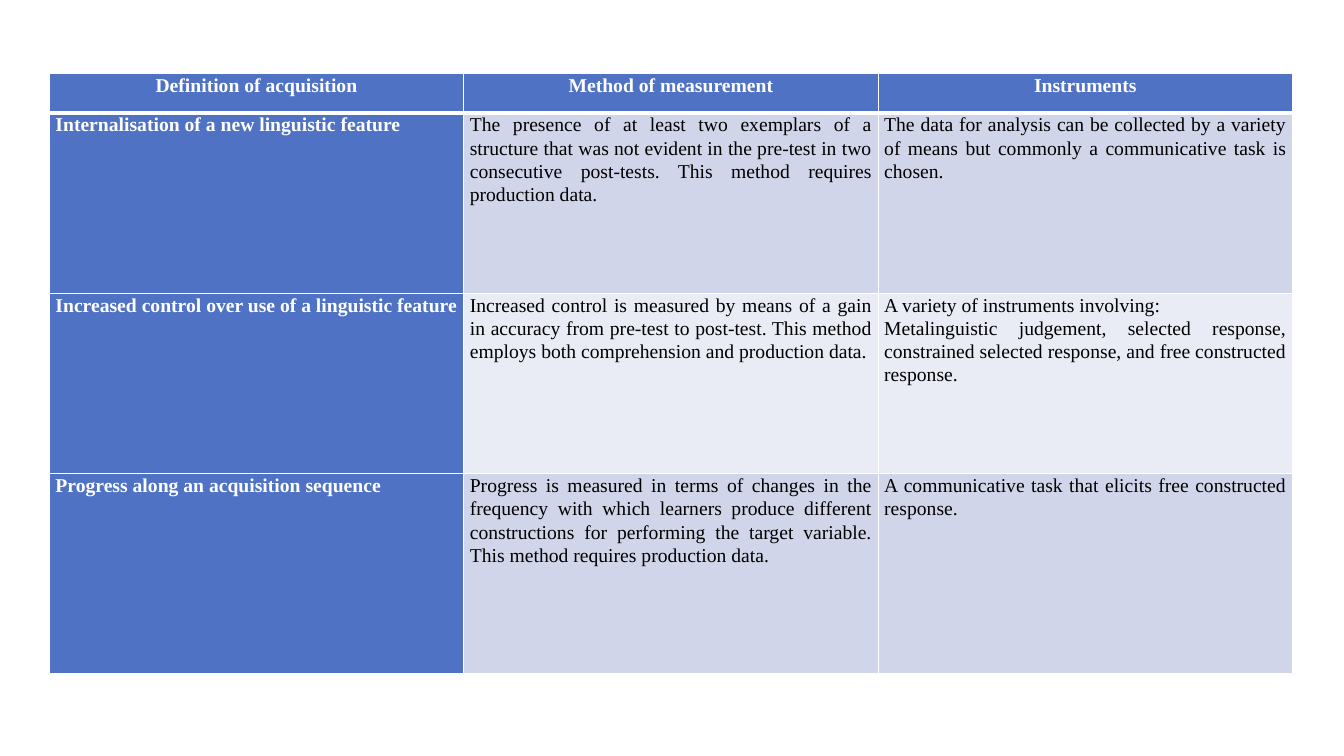
from pptx import Presentation
from pptx.dml.color import RGBColor
from pptx.enum.text import PP_ALIGN as Align
from pptx.oxml.ns import qn
from pptx.util import Inches, Pt
from lxml.etree import SubElement

BLUE = RGBColor(0x50, 0x72, 0xC4)
DARK_BAND = RGBColor(0xD0, 0xD5, 0xEA)
LIGHT_BAND = RGBColor(0xE9, 0xEB, 0xF5)
WHITE = RGBColor(0xFF, 0xFF, 0xFF)
BLACK = RGBColor(0, 0, 0)

COLUMN_WIDTH = 4.11
ROW_HEIGHTS = [0.39, 1.79, 1.79, 1.98]
ROWS = [
    ["Definition of acquisition", "Method of measurement", "Instruments"],
    ["Internalisation of a new linguistic feature",
     "The presence of at least two exemplars of a structure that was not evident in the "
     "pre-test in two consecutive post-tests. This method requires production data.",
     "The data for analysis can be collected by a variety of means but commonly a "
     "communicative task is chosen."],
    ["Increased control over use of a linguistic feature",
     "Increased control is measured by means of a gain in accuracy from pre-test to "
     "post-test. This method employs both comprehension and production data.",
     "A variety of instruments involving:\nMetalinguistic judgement, selected response, "
     "constrained selected response, and free constructed response."],
    ["Progress along an acquisition sequence",
     "Progress is measured in terms of changes in the frequency with which learners produce "
     "different constructions for performing the target variable. This method requires "
     "production data.",
     "A communicative task that elicits free constructed response."],
]


def add_border(cell, side, width):
    line = SubElement(cell._tc.get_or_add_tcPr(), qn(f"a:ln{side}"), w=str(Pt(width)))
    fill = SubElement(line, qn("a:solidFill"))
    SubElement(fill, qn("a:srgbClr"), val=str(WHITE))


presentation = Presentation()
presentation.slide_width = Inches(13.33)
presentation.slide_height = Inches(7.5)
slide = presentation.slides.add_slide(presentation.slide_layouts[6])

# Table grid
table = slide.shapes.add_table(
    len(ROWS), len(ROWS[0]), Inches(0.49), Inches(0.73),
    Inches(COLUMN_WIDTH * len(ROWS[0])), Inches(sum(ROW_HEIGHTS))).table
table.first_col = True
for column in table.columns:
    column.width = Inches(COLUMN_WIDTH)
for row, height in zip(table.rows, ROW_HEIGHTS):
    row.height = Inches(height)

# Cells: blue header row and first column, banded body
for row_index, texts in enumerate(ROWS):
    for column_index, text in enumerate(texts):
        cell = table.cell(row_index, column_index)
        is_heading = row_index == 0 or column_index == 0
        cell.margin_left = cell.margin_right = Inches(0.06)
        cell.margin_top = cell.margin_bottom = 0

        for side in "LRTB":
            under_header = (row_index, side) in [(0, "B"), (1, "T")]
            add_border(cell, side, 3 if under_header else 1)
        cell.fill.solid()
        band = DARK_BAND if row_index % 2 else LIGHT_BAND
        cell.fill.fore_color.rgb = BLUE if is_heading else band

        cell.text_frame.text = text
        for paragraph in cell.text_frame.paragraphs:
            paragraph.alignment = Align.JUSTIFY if row_index else Align.CENTER
            paragraph.line_spacing = 1.07
            for run in paragraph.runs:
                run.font.name = "Times New Roman"
                run.font.size = Pt(14)
                run.font.bold = is_heading
                run.font.color.rgb = WHITE if is_heading else BLACK

presentation.save("out.pptx")
